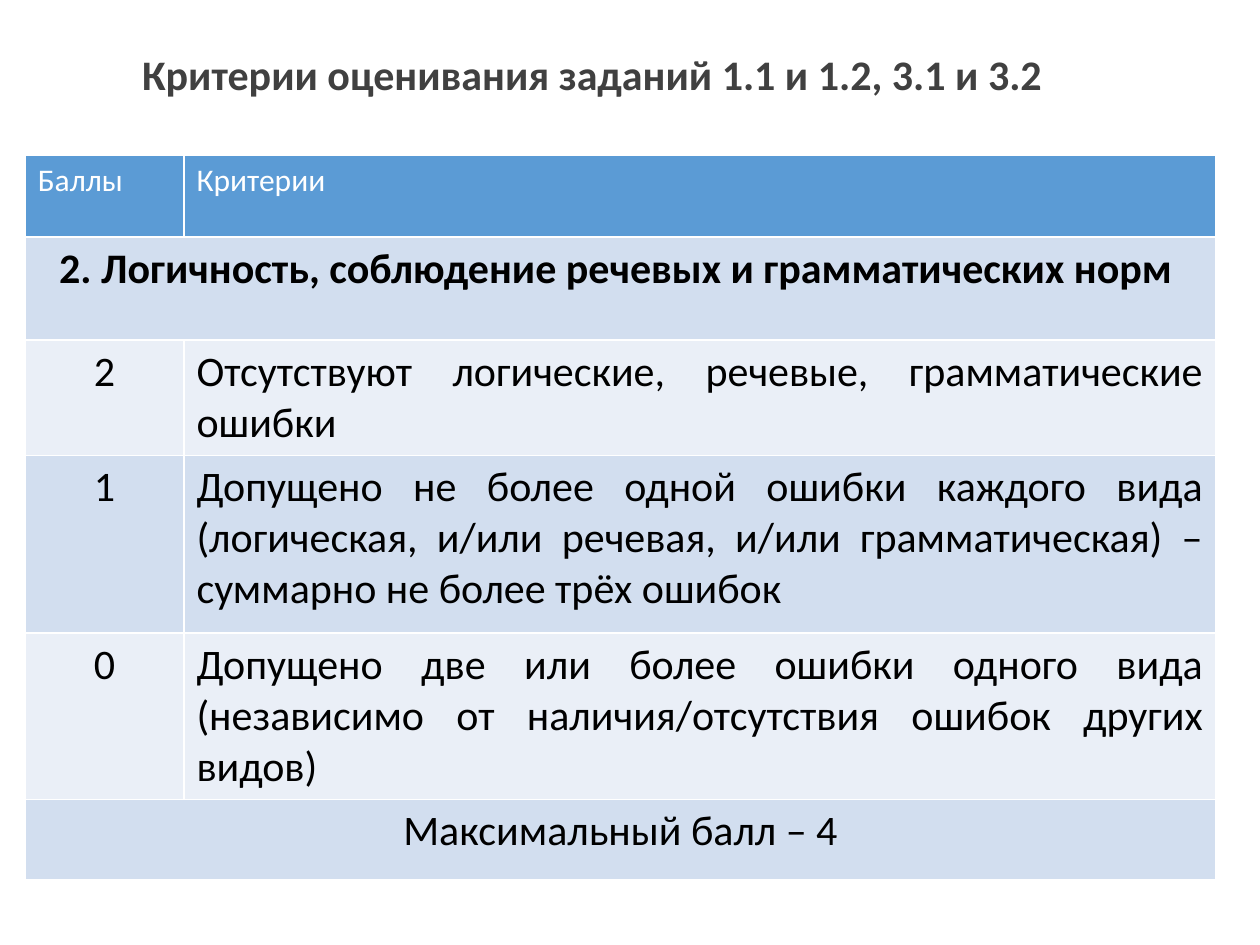
from pptx import Presentation
from pptx.dml.color import RGBColor
from pptx.enum.text import MSO_ANCHOR, PP_ALIGN
from pptx.util import Inches, Pt

LEFT, MID, JUST = PP_ALIGN.LEFT, PP_ALIGN.CENTER, PP_ALIGN.JUSTIFY
CENTER = MSO_ANCHOR.MIDDLE
FONT = "Calibri"
COLORS = {
    "title": "404040",
    "text": "000000",
    "white": "FFFFFF",
    "head": "5B9BD5",
    "dark": "D2DEEF",
    "light": "EAEFF7",
}
COLS = [1.26, 8.19]
ROWS = [
    (0.65, ["Баллы", "Критерии"]),
    (0.82, ["2. Логичность, соблюдение речевых и грамматических норм "]),
    (0.82, ["2", "Отсутствуют логические, речевые, грамматические ошибки"]),
    (1.41, ["1", "Допущено не более одной ошибки каждого вида (логическая, "
                 "и/или речевая, и/или грамматическая) – суммарно не более "
                 "трёх ошибок"]),
    (1.28, ["0", "Допущено две или более ошибки одного вида (независимо от "
                 "наличия/отсутствия ошибок других видов)"]),
    (0.64, ["Максимальный балл – 4"]),
]
SECTION = 1


def paint(color):
    return RGBColor.from_string(COLORS[color])


def write(frame, text, size=24, color="text", bold=False, align=LEFT):
    frame.word_wrap = True
    para = frame.paragraphs[0]
    para.alignment = align
    run = para.add_run()
    run.text = text
    font = run.font
    font.name, font.size, font.bold = FONT, Pt(size), bold
    font.color.rgb = paint(color)
    return para


class Deck:
    def __init__(self, width, height):
        self.prs = Presentation()
        self.prs.slide_width = Inches(width)
        self.prs.slide_height = Inches(height)
        self.slide = self.prs.slides.add_slide(self.prs.slide_layouts[5])

    def title(self, text, left, top, width, height):
        box = self.slide.shapes.title
        box.left, box.top = Inches(left), Inches(top)
        box.width, box.height = Inches(width), Inches(height)
        box.text_frame.vertical_anchor = CENTER
        para = write(box.text_frame, text, color="title", bold=True, align=MID)
        para.line_spacing = 0.9
        para.space_before = Pt(7.5)

    def table(self, rows, cols, left, top):
        height = sum(size for size, _ in rows)
        table = self.slide.shapes.add_table(
            len(rows), len(cols), Inches(left), Inches(top),
            Inches(sum(cols)), Inches(height)).table
        for col, width in zip(table.columns, cols):
            col.width = Inches(width)
        for num, (size, texts) in enumerate(rows):
            table.rows[num].height = Inches(size)
            self.row(table, num, texts)

    def row(self, table, num, texts):
        head = num == 0
        band = "head" if head else "dark" if num % 2 else "light"
        cells = [table.cell(num, col) for col in range(len(table.columns))]
        for cell in cells:
            cell.fill.solid()
            cell.fill.fore_color.rgb = paint(band)
        if len(texts) == 1:
            cells[0].merge(cells[-1])
        for cell, text, align in zip(cells, texts, (MID, JUST)):
            if head:
                write(cell.text_frame, text, size=18, color="white")
            else:
                write(cell.text_frame, text, bold=num == SECTION, align=align)


def main():
    deck = Deck(10, 7.5)
    deck.title("Критерии оценивания заданий 1.1 и 1.2, 3.1 и 3.2",
               0.2, 0.36, 9, 0.5)
    deck.table(ROWS, COLS, 0.2, 1.23)
    deck.prs.save("out.pptx")


if __name__ == "__main__":
    main()
